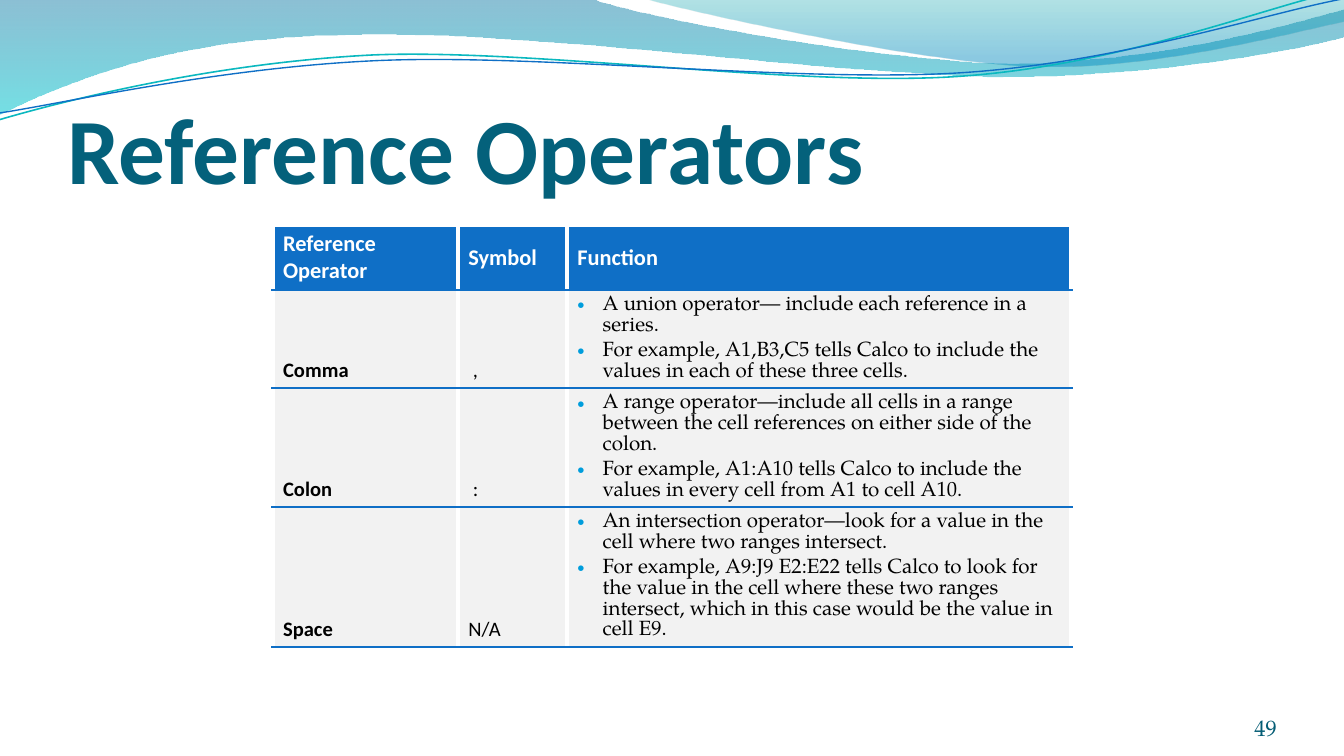
"""Build the Reference Operators slide with its wave header and operator table."""
import dataclasses
import typing

import lxml.etree
import pptx
import pptx.dml.color
import pptx.enum.text
import pptx.oxml.ns
import pptx.util

Point = tuple[float, float]
Anchor = pptx.enum.text.MSO_ANCHOR
Align = pptx.enum.text.PP_ALIGN
BLUE, WHITE, GREY, BLACK = "0F6FC6", "FFFFFF", "F2F2F2", "000000"
SERIF, SANS = "TeX Gyre Pagella", "Calibri"


@dataclasses.dataclass
class Stop:
    position: float
    color: str
    alpha: int


@dataclasses.dataclass
class Wave:
    """An outline of straight runs (one point) and Bezier curves (three points)."""
    start: Point
    segments: list[list[Point]]
    stops: tuple[Stop, ...] = ()
    line: str = ""
    width: float = 0


@dataclasses.dataclass
class Operator:
    name: str
    symbol: str
    functions: list[str]


WAVES = [
    Wave((0, 0), [
        [(4.4, -0.01)],
        [(4.76, 0.13), (6.64, 0.47), (7.58, 0.47)],
        [(8.53, 0.47), (9.58, 0.19), (10, 0.07)],
        [(10.01, 0.27)],
        [(9.83, 0.33), (8.7, 0.57), (7.46, 0.57)],
        [(6.22, 0.56), (3.82, 0.21), (2.57, 0.26)],
        [(1.29, 0.27), (0.46, 0.62), (-0.01, 0.85)],
    ], stops=(Stop(0, "0074A1", 45), Stop(1, "00C6CF", 55))),
    Wave((4.79, -0.01), [
        [(5.09, 0.08), (6.82, 0.46), (7.69, 0.49)],
        [(8.56, 0.52), (9.61, 0.24), (10, 0.16)],
        [(10, 0)],
    ], stops=(Stop(0, "00A1A9", 30), Stop(0.8, "008BBF", 45))),
    Wave((0, 0.89), [
        [(0.48, 0.75), (1.58, 0.47), (2.77, 0.41)],
        [(3.96, 0.36), (5.92, 0.65), (7.12, 0.57)],
        [(8.33, 0.49), (9.39, 0.06), (9.98, -0.07)],
    ], line="0AB8BF", width=0.85),
    Wave((0, 0.84), [
        [(0.47, 0.77), (1.64, 0.5), (2.83, 0.45)],
        [(4.03, 0.4), (5.97, 0.62), (7.17, 0.54)],
        [(8.36, 0.46), (9.41, 0.1), (10, -0.01)],
    ], line=BLUE, width=0.75),
]
HEADINGS = ["Reference Operator", "Symbol", "Function"]
OPERATORS = [
    Operator("Comma", " ,", [
        "A union operator— include each reference in a series.",
        "For example, A1,B3,C5 tells Calco to include the values in each of these three cells.",
    ]),
    Operator("Colon", " :", [
        "A range operator—include all cells in a range between the cell references "
        "on either side of the colon.",
        "For example, A1:A10 tells Calco to include the values in every cell from A1 to cell A10.",
    ]),
    Operator("Space", "N/A", [
        "An intersection operator—look for a value in the cell where two ranges intersect.",
        "For example, A9:J9 E2:E22 tells Calco to look for the value in the cell where these "
        "two ranges intersect, which in this case would be the value in cell E9.",
    ]),
]
COLUMN_WIDTHS = [3.5, 2.06, 9.52]
ROW_HEIGHTS = [1.21, 1.63, 2.06, 2.49]


def rgb(value: str) -> pptx.dml.color.RGBColor:
    """Turn a hex string into a colour."""
    return pptx.dml.color.RGBColor.from_string(value)


def apply(target: typing.Any, values: dict[str, typing.Any]) -> None:
    """Set every attribute named in the dict."""
    for name, value in values.items():
        setattr(target, name, value)


def add_xml(parent: typing.Any, tag: str, **attributes: str) -> typing.Any:
    """Append an XML element such as a:ln to its parent."""
    return lxml.etree.SubElement(parent, pptx.oxml.ns.qn(tag), attributes)


def add_color(parent: typing.Any, color: str) -> None:
    """Append a hex colour element."""
    add_xml(parent, "a:srgbClr", val=color)


def format_text(paragraph: typing.Any, text: str, size: float, color: str,
                name: str = SANS, bold: bool = False) -> None:
    """Write one run of formatted text."""
    run = paragraph.add_run()
    run.text = text
    apply(run.font, {"size": pptx.util.Pt(size), "name": name, "bold": bold})
    run.font.color.rgb = rgb(color)


def format_frame(frame: typing.Any, top: float) -> None:
    """Anchor a text frame at the bottom with no side margins."""
    apply(frame, {
        "word_wrap": True, "auto_size": pptx.enum.text.MSO_AUTO_SIZE.NONE,
        "vertical_anchor": Anchor.BOTTOM, "margin_left": 0, "margin_right": 0,
        "margin_top": pptx.util.Cm(top), "margin_bottom": 0,
    })


def curve_outline(shape: typing.Any, segments: list[list[Point]]) -> None:
    """Join each three straight steps of a curved segment into one Bezier curve."""
    steps = iter(list(shape._element.iter(pptx.oxml.ns.qn("a:lnTo"))))
    for segment in segments:
        first, *others = [next(steps) for _ in segment]
        if others:
            first.tag = pptx.oxml.ns.qn("a:cubicBezTo")
        for step in others:
            first.append(step[0])
            step.getparent().remove(step)


def add_wave(slide: typing.Any, wave: Wave) -> None:
    """Draw one wave as a gradient area or a thin line."""
    points = [wave.start, *(point for segment in wave.segments for point in segment)]
    places = [(pptx.util.Cm(x * 2.54), pptx.util.Cm(y * 2.54)) for x, y in points]
    builder = slide.shapes.build_freeform(*places[0])
    builder.add_line_segments(places[1:], close=bool(wave.stops))
    shape = builder.convert_to_shape()
    curve_outline(shape, wave.segments)
    shape.shadow.inherit = False
    if not wave.stops:
        shape.fill.background()
        shape.line.color.rgb = rgb(wave.line)
        shape.line.width = pptx.util.Pt(wave.width)
        return
    shape.line.fill.background()
    shape.fill.gradient()
    shape.fill.gradient_angle = 270
    for gradient_stop, stop in zip(shape.fill.gradient_stops, wave.stops):
        gradient_stop.position = stop.position
        gradient_stop.color.rgb = rgb(stop.color)
    colors = shape._element.spPr.iter(pptx.oxml.ns.qn("a:srgbClr"))
    for color, stop in zip(list(colors), wave.stops):
        add_xml(color, "a:alpha", val=str(stop.alpha * 1000))


def format_cell(cell: typing.Any, texts: list[str], header: bool, column: int) -> None:
    """Fill, border and write one table cell."""
    properties = cell._tc.get_or_add_tcPr()
    top = WHITE if header else BLUE
    for side, color in {"L": WHITE, "R": WHITE, "T": top, "B": BLUE}.items():
        width = pptx.util.Pt(1.5 if color == BLUE else 2.25)
        border = add_xml(properties, f"a:ln{side}", w=str(width))
        add_color(add_xml(border, "a:solidFill"), color)
    cell.fill.solid()
    cell.fill.fore_color.rgb = rgb(BLUE if header else GREY)
    apply(cell, {
        "vertical_anchor": Anchor.MIDDLE if header else Anchor.BOTTOM,
        "margin_left": pptx.util.Cm(0.19), "margin_right": pptx.util.Cm(0.19),
        "margin_top": pptx.util.Cm(0.1), "margin_bottom": pptx.util.Cm(0.1),
    })
    bulleted = column == 2 and not header
    for index, text in enumerate(texts):
        paragraph = cell.text_frame.add_paragraph() if index else cell.text_frame.paragraphs[0]
        paragraph.space_before = pptx.util.Pt(2.2)
        if bulleted:
            layout = paragraph._p.get_or_add_pPr()
            indent = pptx.util.Cm(0.48)
            layout.set("marL", str(indent))
            layout.set("indent", str(-indent))
            add_color(add_xml(layout, "a:buClr"), "009DDC")
            add_xml(layout, "a:buFont", typeface="Arial")
            add_xml(layout, "a:buChar", char="•")
        format_text(paragraph, text, 12 if header else 11, WHITE if header else BLACK,
                    SERIF if bulleted else SANS, header or column == 0)


def add_operator_table(slide: typing.Any) -> None:
    """Draw the table of reference operators."""
    rows = [[[heading] for heading in HEADINGS]]
    rows += [[[item.name], [item.symbol], item.functions] for item in OPERATORS]
    table = slide.shapes.add_table(
        len(rows), len(HEADINGS), pptx.util.Cm(5.16), pptx.util.Cm(4.25),
        pptx.util.Cm(sum(COLUMN_WIDTHS)), pptx.util.Cm(sum(ROW_HEIGHTS))).table
    table.horz_banding = False
    for column, width in zip(table.columns, COLUMN_WIDTHS):
        column.width = pptx.util.Cm(width)
    for row_index, (row, height) in enumerate(zip(table.rows, ROW_HEIGHTS)):
        row.height = pptx.util.Cm(height)
        for column_index, texts in enumerate(rows[row_index]):
            format_cell(row.cells[column_index], texts, row_index == 0, column_index)


def main() -> None:
    """Assemble and save the presentation."""
    presentation = pptx.Presentation()
    apply(presentation, {"slide_width": pptx.util.Cm(25.4), "slide_height": pptx.util.Cm(14.29)})
    slide = presentation.slides.add_slide(presentation.slide_layouts[5])
    for wave in WAVES:
        add_wave(slide, wave)
    title = slide.shapes.title
    apply(title, {"left": pptx.util.Cm(1.27), "top": pptx.util.Cm(1.46),
                  "width": pptx.util.Cm(23.06), "height": pptx.util.Cm(2.38)})
    format_frame(title.text_frame, 0.13)
    title.text_frame.paragraphs[0].alignment = Align.LEFT
    format_text(title.text_frame.paragraphs[0], "Reference Operators", 50, "04617B", bold=True)
    add_operator_table(slide)
    number = slide.shapes.add_textbox(*map(pptx.util.Cm, (22.02, 13.24, 2.11, 0.76)))
    format_frame(number.text_frame, 0)
    number.text_frame.paragraphs[0].alignment = Align.RIGHT
    format_text(number.text_frame.paragraphs[0], "49", 12, "045D75", SERIF)
    presentation.save("out.pptx")


if __name__ == "__main__":
    main()
